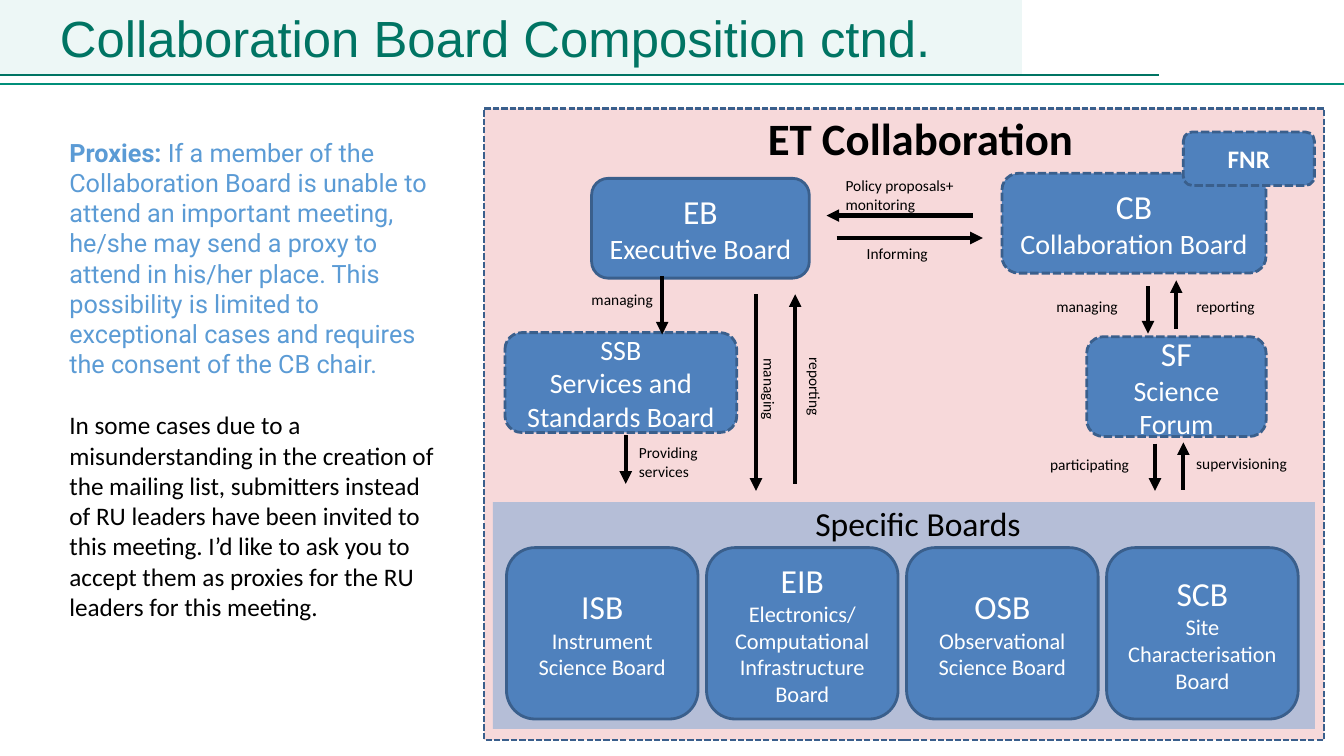
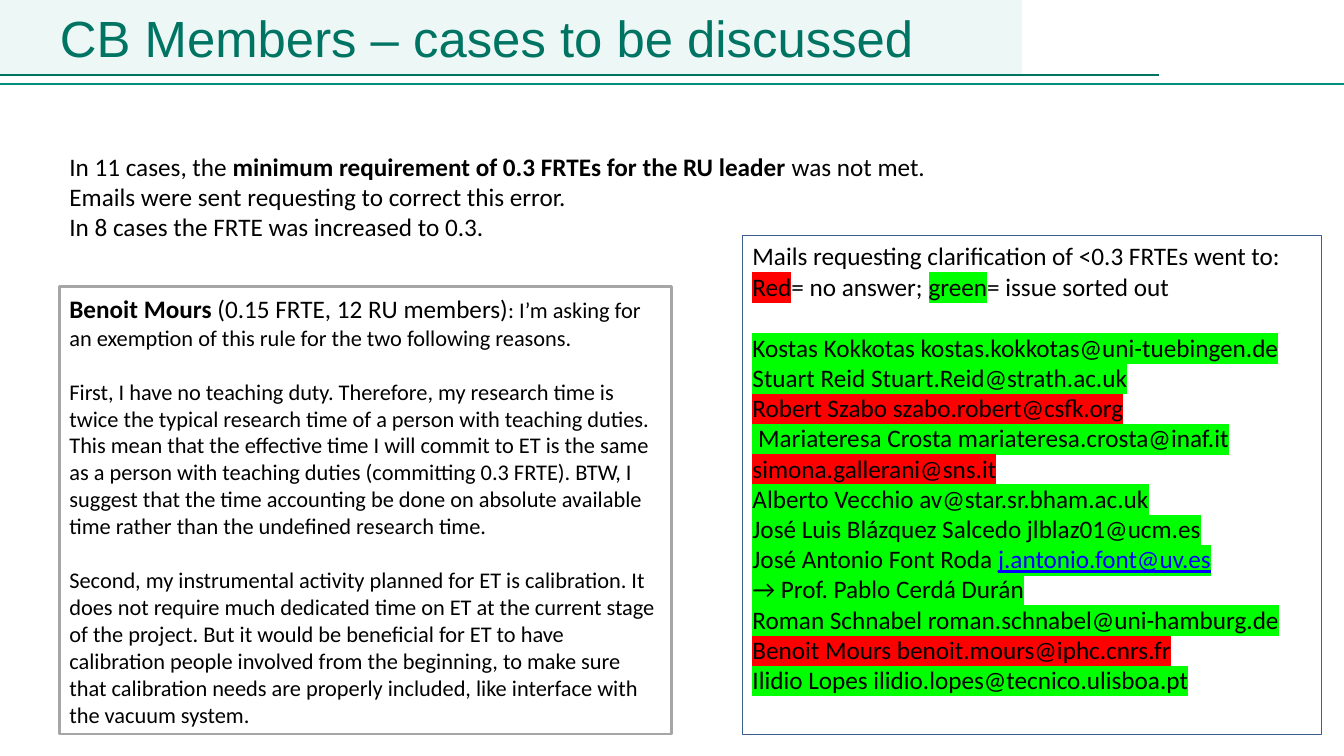
"""Build two slides on the composition and members of a collaboration board."""
from lxml import etree
from pptx import Presentation
from pptx import util as u
from pptx.dml.color import RGBColor
from pptx.enum import dml, shapes, text
from pptx.oxml.ns import qn

Pt = u.Pt
rgb = RGBColor.from_string
GREEN, TEAL, MINT = "007463", "008F7A", "EDF7F6"
BLUE, NAVY, SKY = "4F81BD", "3A5F8C", "5B9BD5"
BLACK, WHITE, PINK, GREY = "000000", "FFFFFF", "CE181E", "A6A6A6"
RED_MARK, GREEN_MARK = "FF0000", "00FF00"
RECT, ROUND = shapes.MSO_SHAPE.RECTANGLE, shapes.MSO_SHAPE.ROUNDED_RECTANGLE
DASH = dml.MSO_LINE.SQUARE_DOT
MIDDLE = text.MSO_ANCHOR.MIDDLE
LEFT, CENTER = text.PP_ALIGN.LEFT, text.PP_ALIGN.CENTER


def box(s, at, paras=(), kind=None, fill=None, alpha=None, line=None, width=2, dash=None,
        anchor=text.MSO_ANCHOR.TOP, align=LEFT, rot=0, gaps=(), **base):
    """Add a text box or preset shape with paragraphs of (text, format) runs."""
    at = [Pt(v) for v in at]
    sp = s.shapes.add_shape(kind, *at) if kind else s.shapes.add_textbox(*at)
    sp.rotation = rot
    if kind:
        sp.shadow.inherit = False
    if fill:
        sp.fill.solid()
        sp.fill.fore_color.rgb = rgb(fill)
        if alpha:
            clr = sp._element.spPr.find(qn("a:solidFill"))[0]
            etree.SubElement(clr, qn("a:alpha")).set("val", str(alpha * 1000))
    else:
        sp.fill.background()
    if line:
        sp.line.color.rgb = rgb(line)
        sp.line.width = Pt(width)
        sp.line.dash_style = dash
    else:
        sp.line.fill.background()
    tf = sp.text_frame
    tf.word_wrap = True
    tf.vertical_anchor = anchor
    for i, runs in enumerate(paras):
        p = tf.paragraphs[0] if i == 0 else tf.add_paragraph()
        p.alignment = align
        if i in gaps:
            p.space_before = Pt(gaps[i])
        for words, extra in runs:
            r = p.add_run()
            r.text = words
            fmt = {"name": "Calibri", "size": 18, "color": BLACK} | base | extra
            r.font.color.rgb = rgb(fmt.pop("color"))
            mark = fmt.pop("mark", None)
            fmt["size"] = Pt(fmt["size"])
            for key, value in fmt.items():
                setattr(r.font, key, value)
            if mark:
                hl = etree.Element(qn("a:highlight"))
                etree.SubElement(hl, qn("a:srgbClr")).set("val", mark)
                r.font._element.find(qn("a:solidFill")).addnext(hl)
    return sp


def connect(s, ends, color=BLACK, width=3, arrow=True):
    """Add a straight line, with an arrowhead at its end if wanted."""
    c = s.shapes.add_connector(shapes.MSO_CONNECTOR.STRAIGHT, *[Pt(v) for v in ends])
    c.line.color.rgb = rgb(color)
    c.line.width = Pt(width)
    spPr = c._element.spPr
    if arrow:
        etree.SubElement(spPr.find(qn("a:ln")), qn("a:tailEnd")).set("type", "triangle")
    etree.SubElement(spPr, qn("a:effectLst"))


prs = Presentation()
prs.slide_width, prs.slide_height = Pt(960), Pt(540)

slides = []
for title in ("Collaboration Board Composition ctnd.", "CB Members – cases to be discussed"):
    s = prs.slides.add_slide(prs.slide_layouts[6])
    box(s, (0, 0, 730, 53.3), kind=RECT, fill=MINT)
    connect(s, (0, 53.3, 828, 53.3), GREEN, 1.5, False)
    connect(s, (0, 60, 960, 60), TEAL, 1.5, False)
    tf = box(s, (42.8, 0, 843, 50.4), [[(title, {})]], anchor=MIDDLE,
             name="Arial", size=36.3, color=GREEN).text_frame
    for side in ("left", "right", "top", "bottom"):
        setattr(tf, f"margin_{side}", 0)
    tf.paragraphs[0].line_spacing = 1.07
    slides.append(s)
composition, members = slides

proxy = {"name": "Roboto", "color": SKY}
box(composition, (42.5, 94.3, 283.7, 378), [
    [("Proxies: ", proxy | {"bold": True}),
     ("If a member of the Collaboration Board is unable to attend an important meeting, "
      "he/she may send a proxy to attend in his/her place. This possibility is limited to "
      "exceptional cases and requires the consent of the CB chair.", proxy)],
    [("In some cases due to a misunderstanding in the creation of the mailing list, "
      "submitters instead of RU leaders have been invited to this meeting. I’d like to ask "
      "you to accept them as proxies for the RU leaders for this meeting.", {})],
], gaps={1: 22})

box(composition, (345.8, 77.5, 600, 451), kind=RECT, fill=PINK, alpha=16,
    line=NAVY, width=1.5, dash=DASH)
box(composition, (352, 358.6, 587.3, 162), kind=RECT, fill=SKY, alpha=42)
box(composition, (541.4, 75.6, 240, 46), [[("ET Collaboration", {})]], size=32, bold=True)
box(composition, (575.3, 355.7, 170, 36), [[("Specific Boards", {})]], size=24)

boards = [
    ((715.7, 123.8, 188.6, 71.3), DASH, "CB", 24, "Collaboration Board", 20),
    ((422.6, 127.4, 155.5, 71.3), None, "EB", 24, "Executive Board", 20),
    ((360.7, 237.6, 165.6, 71.3), DASH, "SSB", 20, "Services and Standards Board", 20),
    ((776.2, 240.5, 128.2, 71.3), DASH, "SF", 24, "Science Forum", 20),
]
specific = [
    ("ISB", "Instrument Science Board"),
    ("EIB", "Electronics/ Computational Infrastructure Board"),
    ("OSB", "Observational Science Board"),
    ("SCB", "Site Characterisation Board"),
]
for i, (short, full) in enumerate(specific):
    boards.append(((361.8 + 142.9 * i, 391.2, 136.8, 122.4), None, short, 24, full, 16))
for at, dash, short, short_size, full, full_size in boards:
    box(composition, at, [[(short, {"size": short_size})], [(full, {"size": full_size})]],
        kind=ROUND, fill=BLUE, line=NAVY, dash=dash, anchor=MIDDLE, align=CENTER, color=WHITE)
box(composition, (845.3, 94.3, 93.6, 38.2), [[("FNR", {})]], kind=ROUND, fill=BLUE,
    line=NAVY, dash=DASH, anchor=MIDDLE, align=CENTER, color=WHITE, bold=True)

arrows = [
    (694.8, 154, 590.4, 154), (597.6, 170, 702, 170),
    (473, 197.3, 473, 239), (447, 311, 447, 345.6),
    (540, 210.2, 540, 350.6), (568, 345.6, 568, 210.2),
    (820, 204.5, 820, 238.3), (840.2, 234.7, 840.2, 200.2),
    (825, 316.8, 825, 350.6), (845.3, 350, 845.3, 316),
]
for ends in arrows:
    connect(composition, ends)

labels = [
    (596.9, 122.4, 100, 0, "Policy proposals+", "monitoring"),
    (612, 170.6, 70.6, 0, "Informing"),
    (415.4, 203.8, 70.6, 0, "managing"),
    (449.3, 313.2, 70.6, 0, "Providing services"),
    (747.4, 208.8, 70.6, 0, "managing"),
    (847.4, 208.8, 70.6, 0, "reporting"),
    (516.2, 272.2, 67, 90, "managing"),
    (548.6, 271.4, 67, 90, "reporting"),
    (847.4, 320.8, 93.6, 0, "supervisioning"),
    (743, 321.5, 93.6, 0, "participating"),
]
for x, y, w, rot, *rows in labels:
    box(composition, (x, y, w, 20.6), [[(row, {})] for row in rows], rot=rot, size=11)

box(members, (42.5, 104.4, 640, 76), [
    [("In 11 cases, the ", {}),
     ("minimum requirement of 0.3 FRTEs for the RU leader ", {"bold": True}),
     ("was not met.", {})],
    [("Emails were sent requesting to correct this error.", {})],
    [("In 8 cases the FRTE was increased to 0.3.", {})],
])

box(members, (42.5, 204.8, 437.3, 319.7), [
    [("Benoit Mours ", {"size": 18, "bold": True}),
     ("(0.15 FRTE, 12 RU members)", {"size": 18}),
     (": I’m asking for an exemption of this rule for the two following reasons.", {})],
    [("First, I have no teaching duty. Therefore, my research time is twice the typical "
      "research time of a person with teaching duties. This mean that the effective time I "
      "will commit to ET is the same as a person with teaching duties (committing 0.3 FRTE). "
      "BTW, I suggest that the time accounting be done on absolute available time rather "
      "than the undefined research time.", {})],
    [("Second, my instrumental activity planned for ET is calibration. It does not require "
      "much dedicated time on ET at the current stage of the project. But it would be "
      "beneficial for ET to have calibration people involved from the beginning, to make "
      "sure that calibration needs are properly included, like interface with the vacuum "
      "system.", {})],
], kind=RECT, line=GREY, width=1.75, anchor=MIDDLE, size=16, gaps={1: 19.5, 2: 19.5})

red, green = {"mark": RED_MARK}, {"mark": GREEN_MARK}
address = green | {"color": "0000FF", "underline": True}
box(members, (530.4, 168.3, 413.5, 356.4), [
    [("Mails requesting clarification of <0.3 FRTEs went to:", {})],
    [("Red", red), ("= no answer; ", {}), ("green", green), ("= issue sorted out", {})],
    [("Kostas Kokkotas kostas.kokkotas@uni-tuebingen.de", green)],
    [("Stuart Reid Stuart.Reid@strath.ac.uk", green)],
    [("Robert Szabo szabo.robert@csfk.org", red)],
    [(" Mariateresa Crosta mariateresa.crosta@inaf.it", green)],
    [("simona.gallerani@sns.it", red)],
    [("Alberto Vecchio av@star.sr.bham.ac.uk", green)],
    [("José Luis Blázquez Salcedo jlblaz01@ucm.es", green)],
    [("José Antonio Font Roda ", green), ("j.antonio.font@uv.es", address)],
    [("→ Prof. Pablo Cerdá Durán", green)],
    [("Roman Schnabel roman.schnabel@uni-hamburg.de", green)],
    [("Benoit Mours benoit.mours@iphc.cnrs.fr", red)],
    [("Ilidio Lopes ilidio.lopes@tecnico.ulisboa.pt", green)],
], kind=RECT, line=NAVY, width=0.75, gaps={2: 22})

prs.save("out.pptx")
